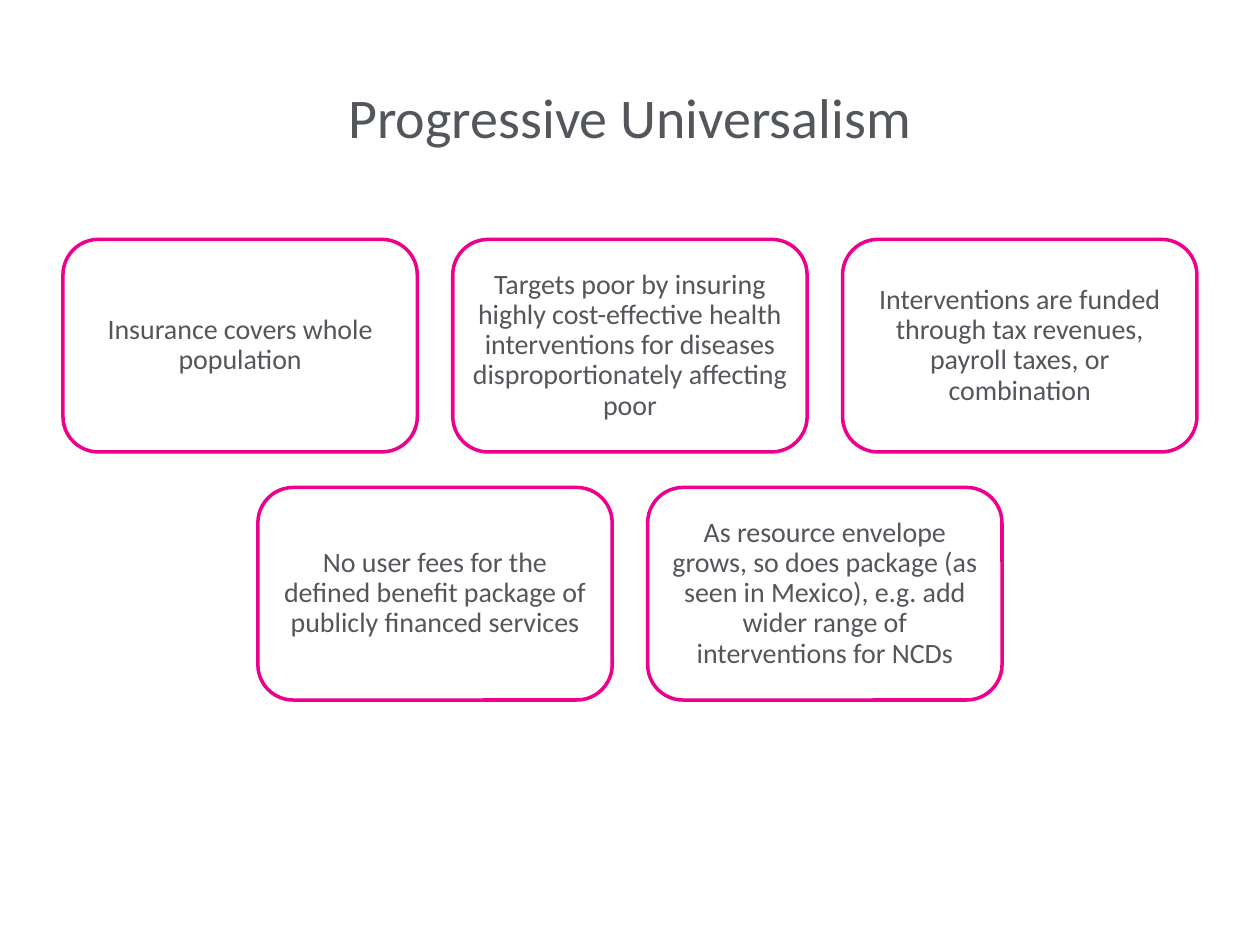
from pptx import Presentation
from pptx.dml.color import RGBColor
from pptx.enum import shapes, text
from pptx.util import Pt

TITLE = "Progressive Universalism"
ROWS = [
    [
        "Insurance covers whole population",
        "Targets poor by insuring highly cost-effective health interventions "
        "for diseases disproportionately affecting poor",
        "Interventions are funded through tax revenues, payroll taxes, "
        "or combination",
    ],
    [
        "No user fees for the defined benefit package of publicly "
        "financed services",
        "As resource envelope grows, so does package (as seen in Mexico), "
        "e.g. add wider range of interventions for NCDs",
    ],
]
COLORS = {"text": "53565A", "line": "EC008C", "fill": "FFFFFF"}
FONT = "Calibri"
PAGE_W, PAGE_H = 720, 540
CARD_W, CARD_H, GAP = 202.5, 121.5, 20.25
TOP, INSET = 136.8, 5


def color(name):
    return RGBColor.from_string(COLORS[name])


def write(shape, words, size):
    frame = shape.text_frame
    frame.word_wrap = True
    frame.vertical_anchor = text.MSO_ANCHOR.MIDDLE
    frame.text = words
    para = frame.paragraphs[0]
    para.alignment = text.PP_ALIGN.CENTER
    font = para.runs[0].font
    font.name, font.size = FONT, Pt(size)
    font.color.rgb = color("text")
    return frame


def add_card(slide, left, top, words):
    card = slide.shapes.add_shape(
        shapes.MSO_SHAPE.ROUNDED_RECTANGLE,
        Pt(left), Pt(top), Pt(CARD_W), Pt(CARD_H))
    card.shadow.inherit = False
    card.fill.solid()
    card.fill.fore_color.rgb = color("fill")
    card.line.color.rgb = color("line")
    card.line.width = Pt(2)
    frame = write(card, words, 16)
    frame.margin_left = frame.margin_right = Pt(INSET)
    frame.margin_top = frame.margin_bottom = Pt(INSET)
    frame.paragraphs[0].line_spacing = 0.9


def main():
    deck = Presentation()
    deck.slide_width, deck.slide_height = Pt(PAGE_W), Pt(PAGE_H)
    slide = deck.slides.add_slide(deck.slide_layouts[6])
    title = slide.shapes.add_textbox(Pt(36), Pt(21.6), Pt(648), Pt(90))
    write(title, TITLE, 32)
    for i, row in enumerate(ROWS):
        span = len(row) * (CARD_W + GAP) - GAP
        left = (PAGE_W - span) / 2
        top = TOP + i * (CARD_H + GAP)
        for j, words in enumerate(row):
            add_card(slide, left + j * (CARD_W + GAP), top, words)
    deck.save("out.pptx")


if __name__ == "__main__":
    main()
